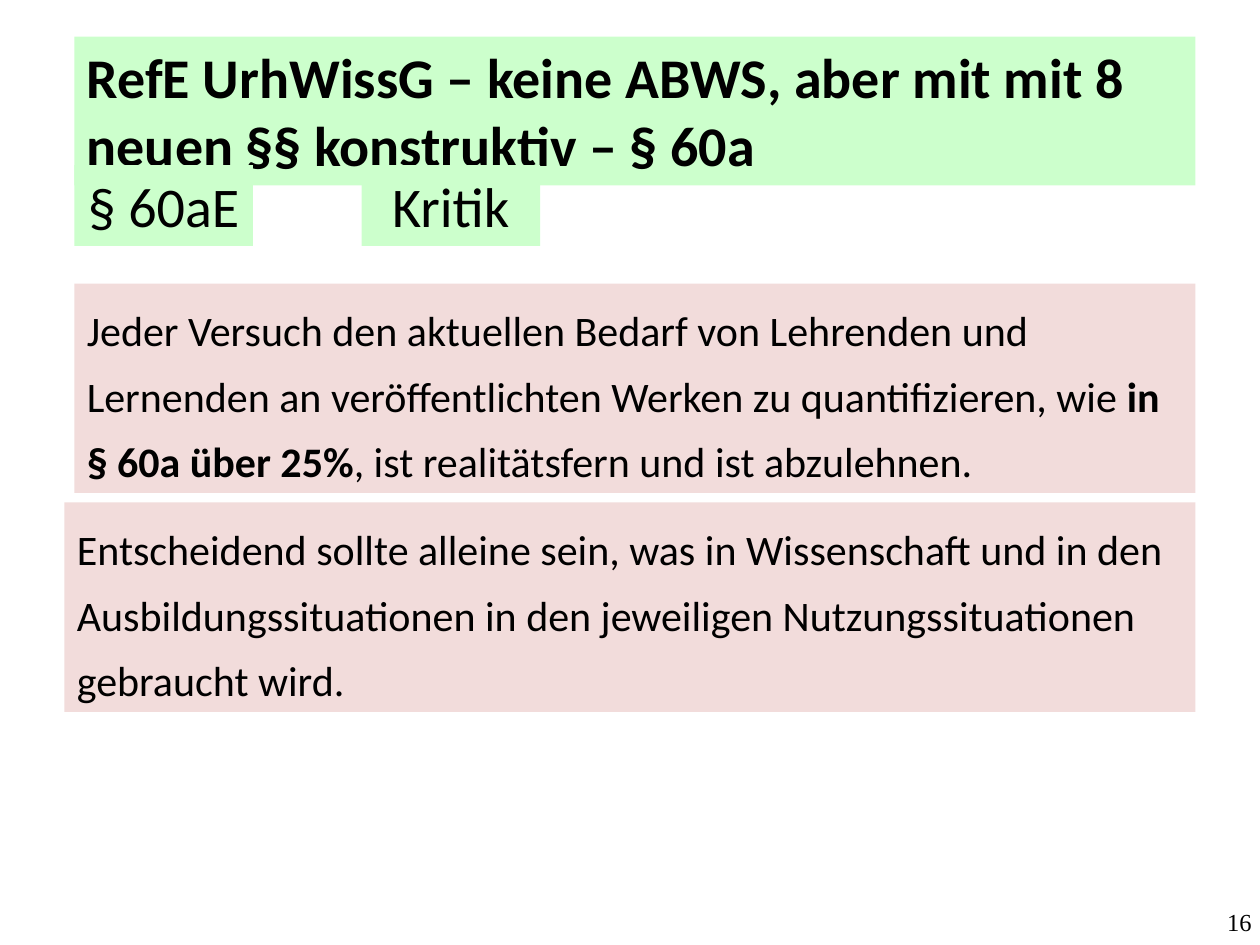
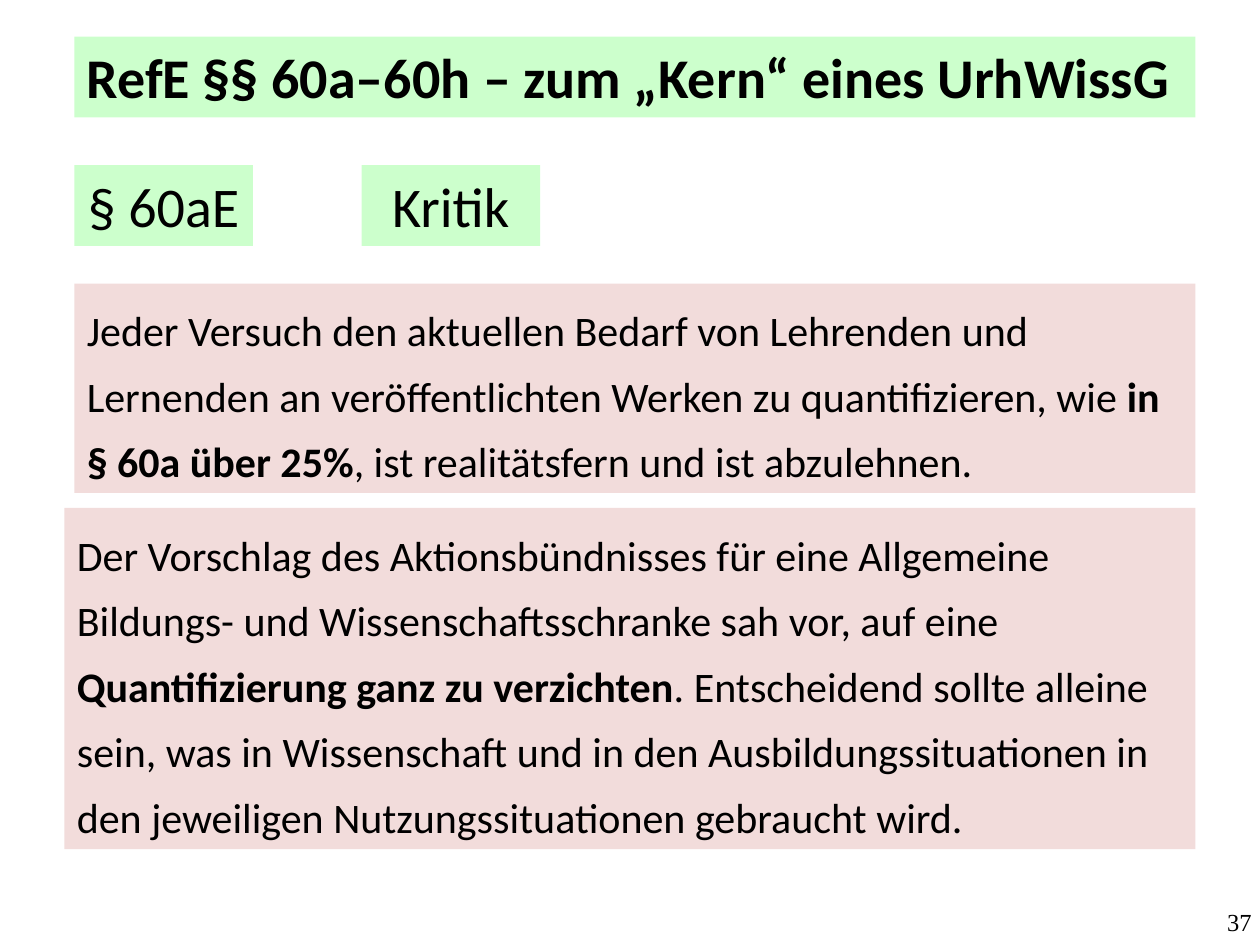
from dataclasses import dataclass

from pptx import Presentation
from pptx.dml.color import RGBColor
from pptx.enum import shapes, text
from pptx.util import Cm, Pt


@dataclass(frozen=True)
class Theme:
    font: str = "Calibri"
    digits: str = "Times New Roman"
    ink: RGBColor = RGBColor(0, 0, 0)
    green: RGBColor = RGBColor(0xCC, 0xFF, 0xCC)
    rose: RGBColor = RGBColor(0xF2, 0xDC, 0xDB)
    head: int = 32
    body: int = 24
    foot: int = 14
    lines: float = 1.3


@dataclass(frozen=True)
class Box:
    """A filled panel, in centimetres; text between asterisks is bold."""
    words: str
    left: float
    top: float
    width: float
    height: float
    fill: RGBColor
    size: int
    align: text.PP_ALIGN = text.PP_ALIGN.LEFT
    lines: float = 1.0


@dataclass(frozen=True)
class Page:
    number: int
    title: str
    title_height: float
    demand: str
    demand_top: float
    demand_height: float
    title_last: bool = False


THEME = Theme()
LEFT, RIGHT = 1.5, 24.1
OUTER = 1.3  # left edge of the lower panel

CHIPS = [
    Box(words, left, 3.33, 3.6, 1.63, THEME.green, THEME.head,
        text.PP_ALIGN.CENTER)
    for words, left in (("§ 60aE", LEFT), ("Kritik", 7.29))
]

NEED = ("Entscheidend sollte alleine sein, was in Wissenschaft und in den "
        "Ausbildungssituationen in den jeweiligen Nutzungssituationen "
        "gebraucht wird.")

PAGES = [
    Page(16, "RefE UrhWissG – keine ABWS, aber mit mit 8 neuen §§ "
             "konstruktiv – § 60a", 3.0, NEED, 10.13, 4.22),
    Page(37, "RefE §§ 60a–60h – zum „Kern“ eines UrhWissG", 1.63,
         "Der Vorschlag des Aktionsbündnisses für eine Allgemeine Bildungs- "
         "und Wissenschaftsschranke sah vor, auf eine *Quantifizierung ganz "
         "zu verzichten*. " + NEED, 10.24, 6.88, title_last=True),
]


def panel(words: str, left: float, top: float, height: float) -> Box:
    return Box(words, left, top, RIGHT - left, height, THEME.rose, THEME.body,
               lines=THEME.lines)


CLAIM = panel("Jeder Versuch den aktuellen Bedarf von Lehrenden und Lernenden "
              "an veröffentlichten Werken zu quantifizieren, wie *in § 60a "
              "über 25%*, ist realitätsfern und ist abzulehnen.",
              LEFT, 5.72, 4.22)


def style(run, font: str, size: int, bold: bool = False) -> None:
    run.font.name = font
    run.font.size = Pt(size)
    run.font.bold = bold
    run.font.color.rgb = THEME.ink


def draw_box(slide, box: Box) -> None:
    shape = slide.shapes.add_shape(
        shapes.MSO_SHAPE.RECTANGLE, Cm(box.left), Cm(box.top),
        Cm(box.width), Cm(box.height))
    shape.shadow.inherit = False
    shape.fill.solid()
    shape.fill.fore_color.rgb = box.fill
    shape.line.fill.background()
    frame = shape.text_frame
    frame.word_wrap = True
    frame.auto_size = text.MSO_AUTO_SIZE.SHAPE_TO_FIT_TEXT
    frame.vertical_anchor = text.MSO_ANCHOR.TOP
    para = frame.paragraphs[0]
    para.alignment = box.align
    para.line_spacing = box.lines
    for i, part in enumerate(box.words.split("*")):
        if part:
            run = para.add_run()
            run.text = part
            style(run, THEME.font, box.size, bold=i % 2 == 1)


def draw_number(slide, number: int) -> None:
    frame = slide.shapes.add_textbox(
        Cm(23.5), Cm(17.73), Cm(1.73), Cm(1.32)).text_frame
    frame.margin_left = frame.margin_right = frame.margin_top = 0
    frame.margin_bottom = Cm(0.17)
    frame.word_wrap = True
    frame.vertical_anchor = text.MSO_ANCHOR.BOTTOM
    frame.text = str(number)
    para = frame.paragraphs[0]
    para.alignment = text.PP_ALIGN.RIGHT
    style(para.runs[0], THEME.digits, THEME.foot)


def draw_page(deck, page: Page) -> None:
    slide = deck.slides.add_slide(deck.slide_layouts[6])
    draw_number(slide, page.number)
    title = Box(f"*{page.title}*", LEFT, 0.74, RIGHT - LEFT,
                page.title_height, THEME.green, THEME.head)
    demand = panel(page.demand, OUTER, page.demand_top, page.demand_height)
    boxes = [*CHIPS, CLAIM]
    boxes.insert(len(boxes) if page.title_last else 0, title)
    for box in [*boxes, demand]:
        draw_box(slide, box)


def main() -> None:
    deck = Presentation()
    deck.slide_width, deck.slide_height = Cm(25.4), Cm(19.05)
    for page in PAGES:
        draw_page(deck, page)
    deck.save("out.pptx")


if __name__ == "__main__":
    main()
